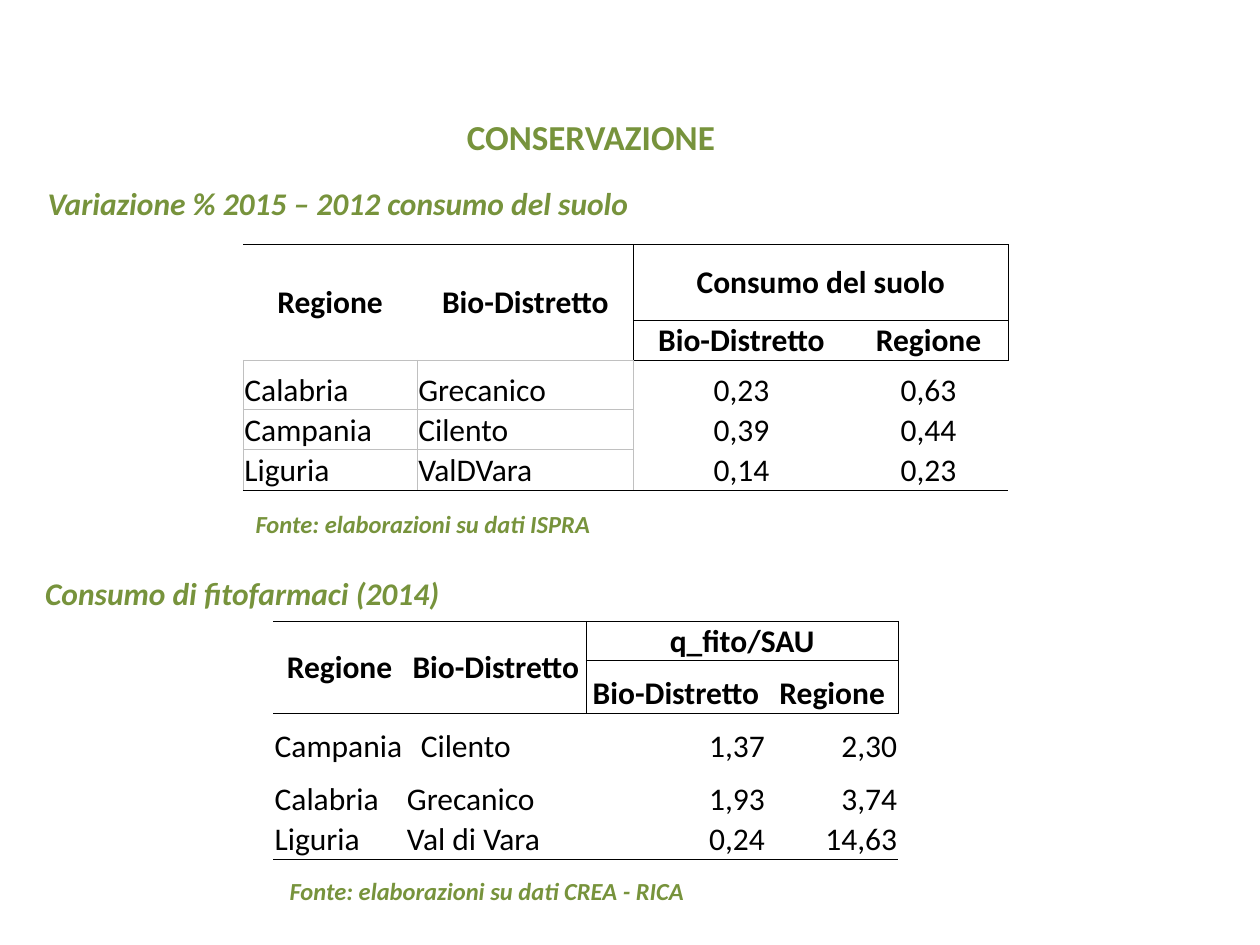
from lxml.etree import SubElement
from pptx import Presentation
from pptx.dml.color import RGBColor
from pptx.enum.text import MSO_ANCHOR, PP_ALIGN
from pptx.oxml.ns import qn
from pptx.util import Inches, Pt

GREEN = RGBColor(0x77, 0x93, 0x3C)
BLACK = RGBColor(0, 0, 0)
GREY = RGBColor(0xC0, 0xC0, 0xC0)


def write_text(tf, text, size, color, align=PP_ALIGN.LEFT, bold=True, italic=False):
    tf.word_wrap = True
    tf.text = text
    p = tf.paragraphs[0]
    p.alignment = align
    font = p.runs[0].font
    font.name, font.size, font.color.rgb = "Calibri", Pt(size), color
    font.bold, font.italic = bold, italic


def set_borders(cell, colors):
    """Draw left, right, top and bottom borders; None leaves a side open."""
    tcPr = cell._tc.get_or_add_tcPr()
    for side, color in zip("LRTB", colors):
        ln = SubElement(tcPr, qn(f"a:ln{side}"), w=str(Pt(0.5)))
        if color is None:
            SubElement(ln, qn("a:noFill"))
        else:
            fill = SubElement(ln, qn("a:solidFill"))
            SubElement(fill, qn("a:srgbClr"), val=str(color))


prs = Presentation()
prs.slide_width, prs.slide_height = Inches(10), Inches(7.5)
s = prs.slides.add_slide(prs.slide_layouts[5])

title = s.shapes.title
title.left, title.top = Inches(2.17), Inches(0.87)
title.width, title.height = Inches(5.04), Inches(0.44)
title.text_frame.vertical_anchor = MSO_ANCHOR.TOP
write_text(title.text_frame, "CONSERVAZIONE", 20, GREEN, PP_ALIGN.CENTER)

# left, top, width, height, size, text
labels = [
    (0.28, 1.41, 5.04, 0.4, 18, "Variazione % 2015 – 2012 consumo del suolo"),
    (1.93, 3.99, 4.41, 0.34, 14, "Fonte: elaborazioni su dati ISPRA"),
    (0.26, 4.51, 3.43, 0.4, 18, "Consumo di fitofarmaci (2014)"),
    (2.2, 6.9, 3.5, 0.34, 14, "Fonte: elaborazioni su dati CREA - RICA"),
]
for left, top, width, height, size, text in labels:
    tb = s.shapes.add_textbox(Inches(left), Inches(top), Inches(width), Inches(height))
    write_text(tb.text_frame, text, size, GREEN, italic=True)

# left, top, column widths, row heights, measure, number alignment, grid colour, data
tables = [
    (1.93, 1.94, [1.38, 1.72, 1.71, 1.26], [0.6, 0.32, 0.39, 0.32, 0.32],
     "Consumo del suolo", PP_ALIGN.CENTER, GREY,
     [["Calabria", "Grecanico", "0,23", "0,63"],
      ["Campania", "Cilento", "0,39", "0,44"],
      ["Liguria", "ValDVara", "0,14", "0,23"]]),
    (2.17, 4.93, [1.05, 1.43, 1.43, 1.05], [0.31, 0.42, 0.42, 0.42, 0.32],
     "q_fito/SAU", PP_ALIGN.RIGHT, None,
     [["Campania", "Cilento", "1,37", "2,30"],
      ["Calabria", "Grecanico", "1,93", "3,74"],
      ["Liguria", "Val di Vara", "0,24", "14,63"]]),
]
for left, top, widths, heights, measure, number_align, grid, data in tables:
    table = s.shapes.add_table(5, 4, Inches(left), Inches(top),
                               Inches(sum(widths)), Inches(sum(heights))).table
    table.first_row = table.horz_banding = False
    for col, width in zip(table.columns, widths):
        col.width = Inches(width)
    for row, height in zip(table.rows, heights):
        row.height = Inches(height)
    table.cell(0, 0).merge(table.cell(1, 0))
    table.cell(0, 1).merge(table.cell(1, 1))
    table.cell(0, 2).merge(table.cell(0, 3))

    # Rules on the table grid, keyed by (row, column)
    horizontal = {(r, c): BLACK for r in (0, 2, 5) for c in range(4)}
    horizontal.update({(1, c): BLACK for c in (2, 3)})
    vertical = {(r, c): BLACK for r in (0, 1) for c in (2, 4)}
    if grid:
        horizontal.update({(r, c): grid for r in (2, 3, 4) for c in (0, 1)})
        vertical.update({(r, c): grid for r in (2, 3, 4) for c in (0, 1, 2)})

    header = [["Regione", "Bio-Distretto", measure, ""],
              ["", "", "Bio-Distretto", "Regione"]]
    for r, texts in enumerate(header + data):
        for c, text in enumerate(texts):
            cell = table.cell(r, c)
            cell.margin_left = cell.margin_right = cell.margin_top = Inches(0.01)
            cell.margin_bottom = 0
            cell.vertical_anchor = MSO_ANCHOR.MIDDLE if r == 0 else MSO_ANCHOR.BOTTOM
            set_borders(cell, [vertical.get((r, c)),
                               vertical.get((r, c + cell.span_width)),
                               horizontal.get((r, c)),
                               horizontal.get((r + cell.span_height, c))])
            cell.fill.background()
            if text:
                align = PP_ALIGN.CENTER if r < 2 else number_align if c > 1 else PP_ALIGN.LEFT
                write_text(cell.text_frame, text, 18, BLACK, align, bold=r < 2)

# Cilento is set in slightly in the second table
table.cell(2, 1).margin_left = Inches(0.12)

prs.save("out.pptx")
